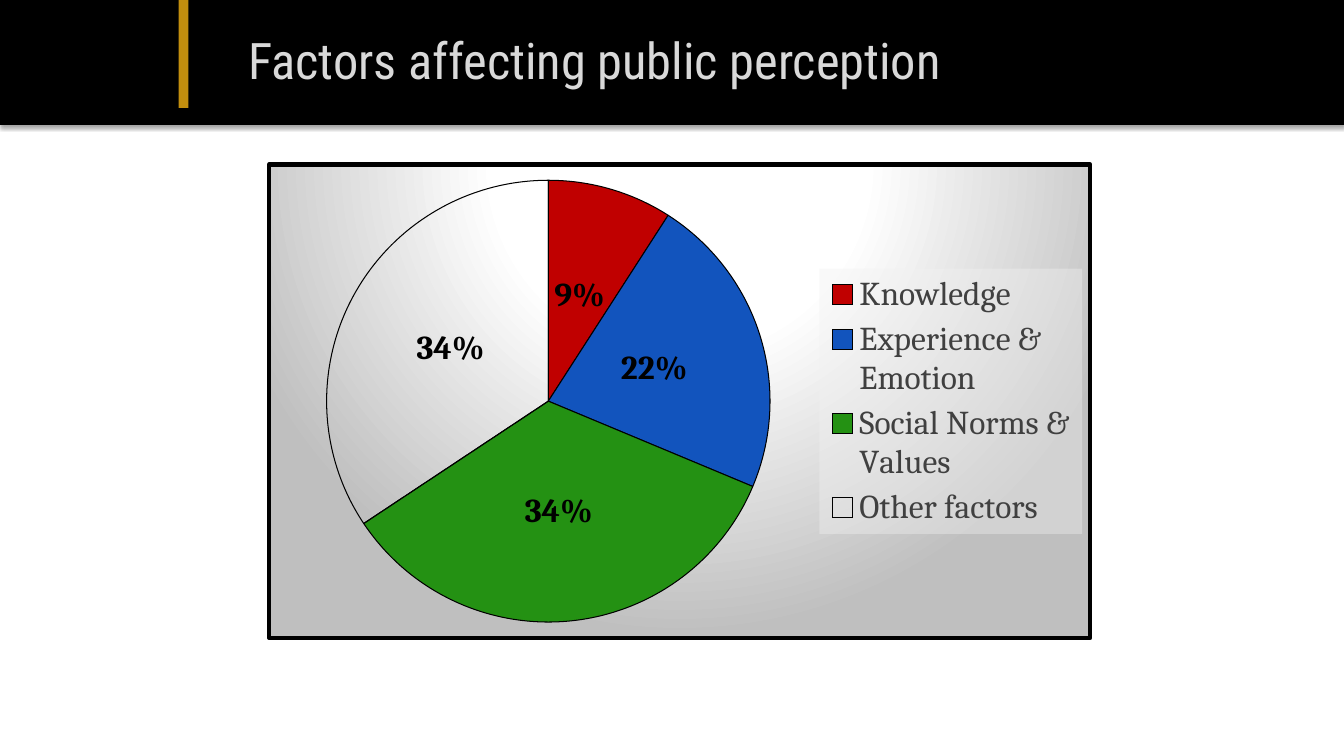
from pptx import Presentation
from pptx.chart.data import CategoryChartData
from pptx.dml.color import RGBColor
from pptx.enum.chart import XL_CHART_TYPE, XL_LABEL_POSITION, XL_LEGEND_POSITION
from pptx.enum.shapes import MSO_SHAPE
from pptx.enum.text import MSO_ANCHOR, MSO_AUTO_SIZE, PP_ALIGN
from pptx.oxml import parse_xml
from pptx.oxml.ns import nsdecls
from pptx.util import Cm, Pt

BLACK = RGBColor(0x00, 0x00, 0x00)
GOLD = RGBColor(0xC2, 0x8E, 0x0E)
TITLE_GRAY = RGBColor(0xD9, 0xD9, 0xD9)
LEGEND_GRAY = RGBColor(0x40, 0x40, 0x40)
RED = RGBColor(0xC0, 0x00, 0x00)
BLUE = RGBColor(0x12, 0x54, 0xBD)
GREEN = RGBColor(0x24, 0x91, 0x13)

FACTORS = [
    ("Knowledge", 9, RED),
    ("Experience & Emotion", 22, BLUE),
    ("Social Norms & Values", 34, GREEN),
    ("Other factors", 34, None),
]

SHADOW = (
    f'<a:effectLst {nsdecls("a")}><a:outerShdw blurRad="39370" dist="22860" dir="5400000" '
    'rotWithShape="0"><a:srgbClr val="000000"><a:alpha val="35000"/></a:srgbClr>'
    '</a:outerShdw></a:effectLst>'
)
CHART_FRAME = (
    f'<c:spPr {nsdecls("c", "a")}><a:gradFill><a:gsLst>'
    '<a:gs pos="0"><a:srgbClr val="FFFFFF"/></a:gs>'
    '<a:gs pos="39000"><a:srgbClr val="FFFFFF"/></a:gs>'
    '<a:gs pos="100000"><a:srgbClr val="BFBFBF"/></a:gs></a:gsLst>'
    '<a:path path="circle"><a:fillToRect l="50000" t="-80000" r="50000" b="180000"/></a:path>'
    '</a:gradFill><a:ln w="38100"><a:solidFill><a:srgbClr val="000000"/></a:solidFill>'
    '<a:round/></a:ln></c:spPr>'
)
LEGEND_PANEL = (
    f'<c:spPr {nsdecls("c", "a")}><a:solidFill><a:srgbClr val="F2F2F2">'
    '<a:alpha val="39000"/></a:srgbClr></a:solidFill><a:ln><a:noFill/></a:ln></c:spPr>'
)


def manual_layout(left, top, width, height, inner=False):
    target = '<c:layoutTarget val="inner"/>' if inner else ""
    return parse_xml(
        f'<c:layout {nsdecls("c")}><c:manualLayout>{target}'
        '<c:xMode val="edge"/><c:yMode val="edge"/>'
        f'<c:x val="{left}"/><c:y val="{top}"/><c:w val="{width}"/><c:h val="{height}"/>'
        '</c:manualLayout></c:layout>'
    )


def replace_layout(parent, position, layout):
    for old_layout in parent.xpath("./c:layout"):
        parent.remove(old_layout)
    parent.insert(position, layout)


def set_font(font, name, size, color, bold=False):
    font.name = name
    font.size = Pt(size)
    font.color.rgb = color
    font.bold = bold


def add_bar(slide, left, width, height, color):
    bar = slide.shapes.add_shape(MSO_SHAPE.RECTANGLE, left, Cm(0), width, height)
    bar.fill.solid()
    bar.fill.fore_color.rgb = color
    bar.line.fill.background()
    bar.element.spPr.append(parse_xml(SHADOW))


def format_title(slide, text):
    title = slide.shapes.title
    title.left, title.top, title.width, title.height = Cm(6.25), Cm(0.76), Cm(22.58), Cm(1.47)
    frame = title.text_frame
    frame.margin_left = frame.margin_top = frame.margin_right = frame.margin_bottom = Cm(0)
    frame.vertical_anchor = MSO_ANCHOR.MIDDLE
    frame.auto_size = MSO_AUTO_SIZE.NONE
    frame.word_wrap = True
    paragraph = frame.paragraphs[0]
    paragraph.alignment = PP_ALIGN.LEFT
    run = paragraph.add_run()
    run.text = text
    set_font(run.font, "Roboto Condensed", 36, TITLE_GRAY)
    slide.shapes.element.append(title.element)


def format_slices(plot):
    for index, (_, _, color) in enumerate(FACTORS):
        slice_format = plot.series[0].points[index].format
        if color is None:
            slice_format.fill.background()
        else:
            slice_format.fill.solid()
            slice_format.fill.fore_color.rgb = color
        slice_format.line.color.rgb = BLACK
        slice_format.line.width = Pt(0.75)


def format_labels(plot):
    plot.has_data_labels = True
    labels = plot.data_labels
    labels.show_percentage = True
    labels.show_value = False
    labels.number_format = "0%"
    labels.number_format_is_linked = False
    labels.position = XL_LABEL_POSITION.CENTER
    set_font(labels.font, "Cambria", 24, BLACK, bold=True)


def format_legend(chart):
    chart.has_legend = True
    chart.legend.position = XL_LEGEND_POSITION.RIGHT
    chart.legend.include_in_layout = False
    set_font(chart.legend.font, "Cambria", 24, LEGEND_GRAY)
    legend = chart.element.xpath(".//c:legend")[0]
    replace_layout(legend, 1, manual_layout(0.67, 0.22, 0.32, 0.56))
    legend.xpath("./c:overlay")[0].addnext(parse_xml(LEGEND_PANEL))


def add_factor_pie(slide):
    data = CategoryChartData()
    data.categories = [name for name, _, _ in FACTORS]
    data.add_series("Series 1", [value for _, value, _ in FACTORS])
    chart = slide.shapes.add_chart(
        XL_CHART_TYPE.PIE, Cm(6.73), Cm(4.09), Cm(20.8), Cm(12.04), data
    ).chart
    chart.has_title = False
    set_font(chart.font, "Calibri", 10, BLACK)
    plot = chart.plots[0]
    plot.vary_by_categories = True
    format_slices(plot)
    format_labels(plot)
    format_legend(chart)
    plot_area = chart.element.xpath(".//c:plotArea")[0]
    replace_layout(plot_area, 0, manual_layout(0.07, 0.03, 0.54, 0.94, inner=True))
    chart.element.xpath("./c:chart")[0].addnext(parse_xml(CHART_FRAME))


def main():
    presentation = Presentation()
    presentation.slide_width = Cm(33.87)
    presentation.slide_height = Cm(19.05)
    slide = presentation.slides.add_slide(presentation.slide_layouts[5])
    add_bar(slide, Cm(0), presentation.slide_width, Cm(3.15), BLACK)
    add_bar(slide, Cm(4.5), Cm(0.25), Cm(2.72), GOLD)
    format_title(slide, "Factors affecting public perception")
    add_factor_pie(slide)
    presentation.save("out.pptx")


if __name__ == "__main__":
    main()
